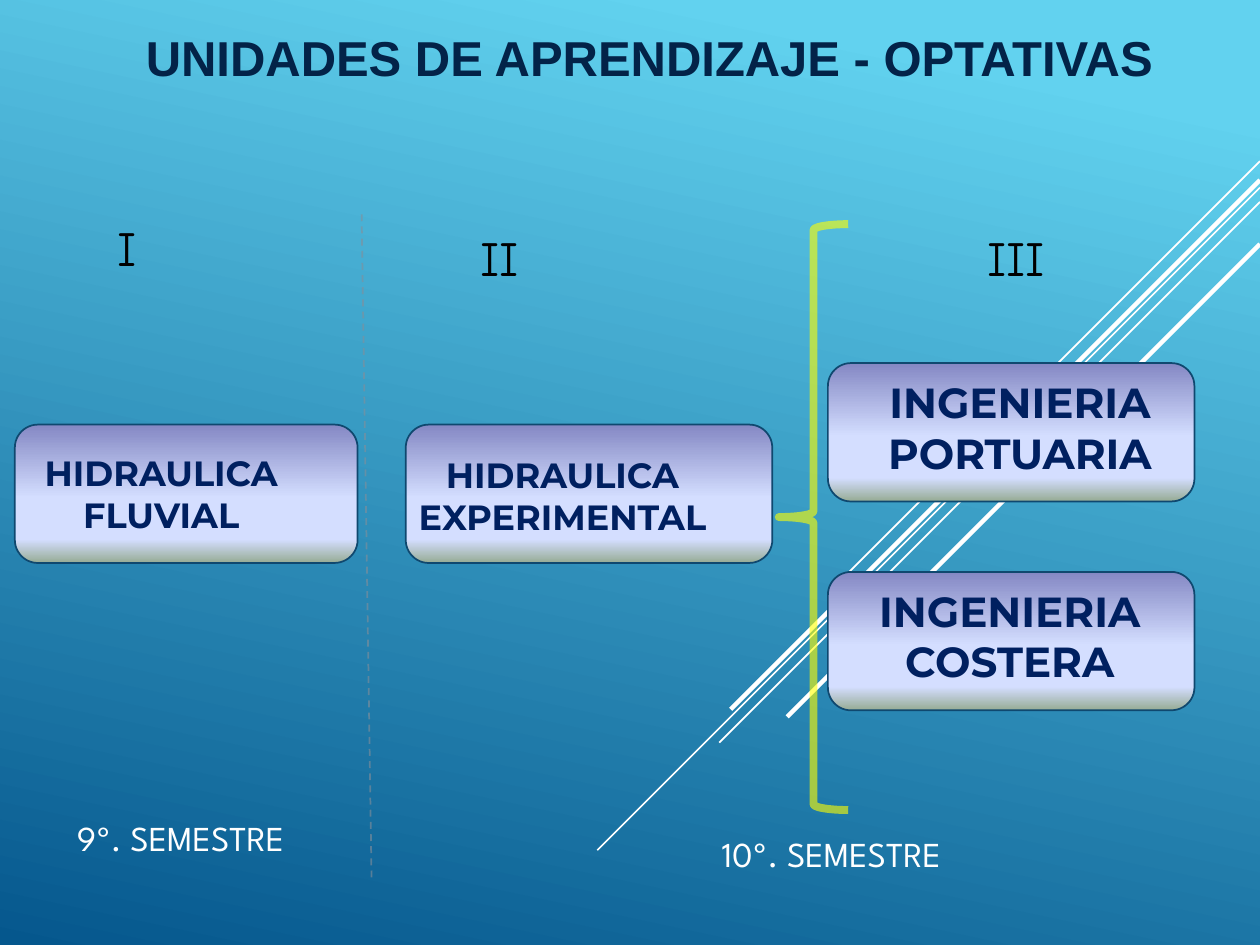
import pptx
import pptx.util
import pptx.dml.color
import pptx.enum.dml
import pptx.enum.shapes
import pptx.enum.text
import pptx.oxml
import pptx.oxml.ns

Cm = pptx.util.Cm
Pt = pptx.util.Pt
Kind = pptx.enum.shapes.MSO_SHAPE
Align = pptx.enum.text.PP_ALIGN
qn = pptx.oxml.ns.qn

SKY = [(0, "62D2EF"), (10, "62D2EF"), (100, "05578D")]
CARD = [(0, "8488C4"), (53, "D4DEFF"), (83, "D4DEFF"), (100, "96AB94")]


def color(code):
    return pptx.dml.color.RGBColor.from_string(code)


def blend(props, stops, angle):
    marks = "".join(
        f'<a:gs pos="{at * 1000}"><a:srgbClr val="{code}"/></a:gs>'
        for at, code in stops
    )
    grad = pptx.oxml.parse_xml(
        f'<a:gradFill {pptx.oxml.ns.nsdecls("a")} rotWithShape="1">'
        f'<a:gsLst>{marks}</a:gsLst>'
        f'<a:lin ang="{angle * 60000}" scaled="0"/></a:gradFill>'
    )
    props.replace(props.find(qn("a:solidFill")), grad)


class Deck:
    def __init__(self, slide):
        self.slide = slide
        self.shapes = slide.shapes
        self.navy = "002060"
        self.edge = "0F486F"

    def paint(self, stops, angle):
        fill = self.slide.background.fill
        fill.solid()
        fill.fore_color.rgb = color(stops[0][1])
        blend(next(self.slide.element.iter(qn("p:bgPr"))), stops, angle)

    def stroke(self, line, code, width, alpha=100):
        line.color.rgb = color(code)
        line.width = Pt(width)
        if alpha < 100:
            tint = next(line._ln.iter(qn("a:srgbClr")))
            tint.makeelement(qn("a:alpha"))
            pptx.oxml.ns.qn("a:alpha")
            mark = tint.makeelement(qn("a:alpha"), {"val": str(alpha * 1000)})
            tint.append(mark)

    def line(self, x1, y1, x2, y2, code, width, alpha=100):
        link = self.shapes.add_connector(
            pptx.enum.shapes.MSO_CONNECTOR.STRAIGHT, Cm(x1), Cm(y1), Cm(x2), Cm(y2)
        )
        self.stroke(link.line, code, width, alpha)
        props = link._element.spPr
        props.append(props.makeelement(qn("a:effectLst")))
        return link

    def card(self, x, y, w):
        box = self.shapes.add_shape(
            Kind.ROUNDED_RECTANGLE, Cm(x), Cm(y), Cm(w), Cm(2.79)
        )
        box.shadow.inherit = False
        box.fill.solid()
        blend(box._element.spPr, CARD, 90)
        self.stroke(box.line, self.edge, 1)

    def brace(self, x, y, w, h):
        mark = self.shapes.add_shape(Kind.LEFT_BRACE, Cm(x), Cm(y), Cm(w), Cm(h))
        mark.shadow.inherit = False
        mark.fill.background()
        self.stroke(mark.line, "FFFF00", 4.5, 60)

    def text(self, x, y, w, h, words, size, face, code,
             bold=False, align=Align.LEFT, indent=0):
        box = self.shapes.add_textbox(Cm(x), Cm(y), Cm(w), Cm(h))
        frame = box.text_frame
        frame.word_wrap = True
        frame.auto_size = pptx.enum.text.MSO_AUTO_SIZE.SHAPE_TO_FIT_TEXT
        frame.margin_left = Cm(0.25 + indent)
        part = frame.paragraphs[0]
        part.alignment = align
        run = part.add_run()
        run.text = words
        run.font.size = Pt(size)
        run.font.name = face
        run.font.bold = bold
        run.font.color.rgb = color(code)

    def label(self, x, y, w, h, words, size):
        self.text(x, y, w, h, words, size, "Montserrat", self.navy, True, Align.CENTER)


def main():
    show = pptx.Presentation()
    show.slide_width, show.slide_height = Cm(25.4), Cm(19.05)
    deck = Deck(show.slides.add_slide(show.slide_layouts[6]))
    deck.paint(SKY, 102)

    rays = [(3.25, 8.71, 1), (3.78, 13.36, 1), (4.07, 10.9, 1),
            (3.63, 10.67, 2.5), (4.92, 9.53, 2.5)]
    for top, run, width in rays:
        deck.line(25.4, top, 25.4 - run, top + run, "FFFFFF", width)

    for x, y, w in [(16.69, 11.53, 7.39), (16.69, 7.32, 7.39),
                    (8.18, 8.56, 7.39), (0.3, 8.56, 6.91)]:
        deck.card(x, y, w)

    deck.label(16.51, 7.47, 8.1, 2.31, "INGENIERIA PORTUARIA", 24)
    deck.label(16.1, 11.68, 8.51, 2.31, "INGENIERIA COSTERA", 24)
    deck.label(0, 8.97, 6.5, 1.96, "HIDRAULICA FLUVIAL", 20)
    deck.label(7.29, 9.02, 8.1, 1.96, "HIDRAULICA EXPERIMENTAL", 20)

    for x, y, w, words, indent in [(2.11, 4.27, 8.41, "I", 0),
                                   (9.09, 4.47, 4.19, "II", 0.35),
                                   (19.3, 4.47, 4.6, "III", 0.35)]:
        deck.text(x, y, w, 1.45, words, 28, "Comic Neue", "000000", indent=indent)

    deck.text(2.69, 0.43, 21.21, 1.45, "UNIDADES DE APRENDIZAJE - OPTATIVAS",
              28, "Arial", "032348", True)
    deck.brace(15.7, 4.52, 1.4, 11.81)
    rule = deck.line(7.29, 4.32, 7.49, 17.73, "858E99", 1, 60)
    rule.line.dash_style = pptx.enum.dml.MSO_LINE.DASH

    for x, y, h, words in [(1.3, 16.33, 1.12, "9º. SEMESTRE"),
                           (14.3, 16.66, 1.96, "10º. SEMESTRE")]:
        deck.text(x, y, 5, h, words, 20, "League Spartan", "FFFFFF")

    show.save("out.pptx")


if __name__ == "__main__":
    main()
